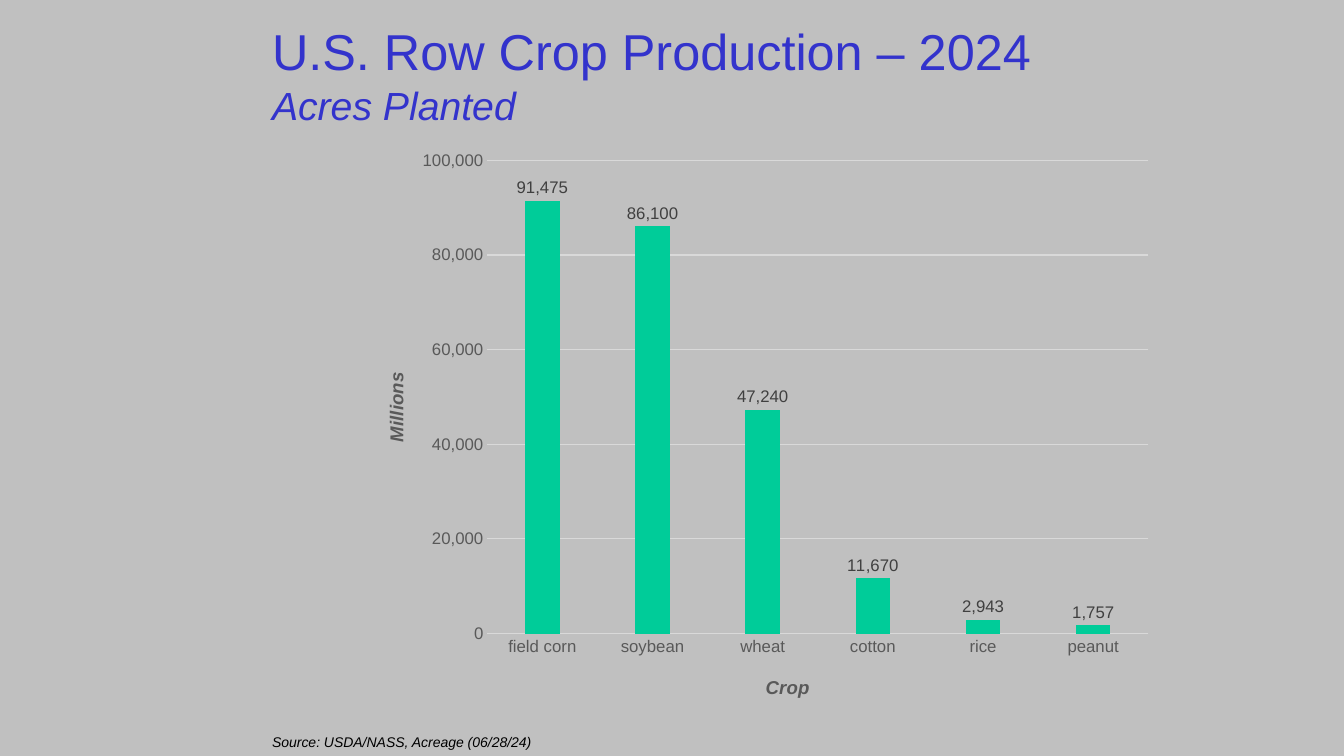
from dataclasses import dataclass

from lxml import etree
from pptx import Presentation
from pptx import util as u
from pptx.chart import data as chart_data
from pptx.dml import color
from pptx.enum import chart as chart_enum
from pptx.enum import text
from pptx.oxml import ns


@dataclass(frozen=True)
class Theme:
    """Colours, font and type sizes of the slide."""
    background: str = "C0C0C0"
    heading: str = "3333CC"
    ink: str = "000000"
    bar: str = "00CC99"
    axis: str = "595959"
    value: str = "404040"
    grid: str = "D9D9D9"
    font: str = "Arial"
    heading_size: float = 36
    subheading_size: float = 28
    axis_title_size: float = 13.3
    label_size: float = 12
    source_size: float = 10


@dataclass(frozen=True)
class Phrase:
    """One line of text and its style."""
    words: str
    size: float
    colour: str
    italic: bool = False


@dataclass(frozen=True)
class TextBlock:
    """A text box holding lines of one paragraph."""
    left: float
    top: float
    width: float
    height: float
    phrases: tuple[Phrase, ...]
    wrap: bool
    anchor: text.MSO_ANCHOR


@dataclass(frozen=True)
class AxisCaption:
    """An axis title, its place in the chart and its rotation."""
    words: str
    x: float
    y: float
    rotation: int


THEME = Theme()
ACRES = {
    "field corn": 91475,
    "soybean": 86100,
    "wheat": 47240,
    "cotton": 11670,
    "rice": 2943,
    "peanut": 1757,
}
TEXT_BLOCKS = (
    TextBlock(2.6, 0.11, 10.63, 1.25, (
        Phrase("U.S. Row Crop Production – 2024", THEME.heading_size, THEME.heading),
        Phrase("Acres Planted", THEME.subheading_size, THEME.heading, True),
    ), True, text.MSO_ANCHOR.MIDDLE),
    TextBlock(2.6, 7.23, 2.8, 0.27, (
        Phrase("Source: USDA/NASS, Acreage (06/28/24)", THEME.source_size, THEME.ink, True),
    ), False, text.MSO_ANCHOR.TOP),
)
CROP_CAPTION = AxisCaption("Crop", 0.5, 0.94, 0)
ACRES_CAPTION = AxisCaption("Millions", 0.02, 0.4, -5400000)


def style_font(font, size: float, colour: str, bold: bool = False, italic: bool = False) -> None:
    """Apply the theme font with a size, colour and emphasis."""
    font.name = THEME.font
    font.size = u.Pt(size)
    font.bold = bold
    font.italic = italic
    font.color.rgb = color.RGBColor.from_string(colour)


def style_line(line) -> None:
    """Give a chart line the grid colour and width."""
    line.color.rgb = color.RGBColor.from_string(THEME.grid)
    line.width = u.Pt(0.75)


def add_text(slide, block: TextBlock) -> None:
    """Draw a text block."""
    box = slide.shapes.add_textbox(
        u.Inches(block.left), u.Inches(block.top), u.Inches(block.width), u.Inches(block.height))
    frame = box.text_frame
    frame.word_wrap = block.wrap
    frame.vertical_anchor = block.anchor
    paragraph = frame.paragraphs[0]
    paragraph.text = "\v".join(phrase.words for phrase in block.phrases)
    for run, phrase in zip(paragraph.runs, block.phrases):
        style_font(run.font, phrase.size, phrase.colour, italic=phrase.italic)


def place(parent, index: int, **settings: float | str) -> None:
    """Set the manual layout of a chart part."""
    for old in parent.findall(ns.qn("c:layout")):
        parent.remove(old)
    layout = etree.Element(ns.qn("c:layout"))
    manual = etree.SubElement(layout, ns.qn("c:manualLayout"))
    for key, value in settings.items():
        etree.SubElement(manual, ns.qn(f"c:{key}")).set("val", str(value))
    parent.insert(index, layout)


def style_axis(axis, caption: AxisCaption) -> None:
    """Style an axis and add its caption."""
    axis.major_tick_mark = chart_enum.XL_TICK_MARK.NONE
    axis.minor_tick_mark = chart_enum.XL_TICK_MARK.NONE
    style_font(axis.tick_labels.font, THEME.label_size, THEME.axis)
    frame = axis.axis_title.text_frame
    frame.text = caption.words
    style_font(frame.paragraphs[0].runs[0].font, THEME.axis_title_size, THEME.axis, True, True)
    title = axis.axis_title._element
    body = title.find(".//" + ns.qn("a:bodyPr"))
    body.set("rot", str(caption.rotation))
    body.set("vert", "horz")
    place(title, 1, xMode="edge", yMode="edge", x=caption.x, y=caption.y)


def add_acres_chart(slide) -> None:
    """Draw the column chart of planted acres."""
    acres = chart_data.CategoryChartData(number_format="#,##0")
    acres.categories = list(ACRES)
    acres.add_series("Series 1", list(ACRES.values()))
    chart = slide.shapes.add_chart(
        chart_enum.XL_CHART_TYPE.COLUMN_CLUSTERED,
        u.Inches(3.62), u.Inches(1.43), u.Inches(7.88), u.Inches(5.57), acres).chart
    chart.has_title = False
    chart.has_legend = False
    style_font(chart.font, THEME.source_size, THEME.ink)

    style_axis(chart.category_axis, CROP_CAPTION)
    style_line(chart.category_axis.format.line)
    value_axis = chart.value_axis
    style_axis(value_axis, ACRES_CAPTION)
    value_axis.format.line.fill.background()
    value_axis.minimum_scale = 0
    value_axis.maximum_scale = 100000
    value_axis.major_unit = 20000
    value_axis.tick_labels.number_format = "#,##0"
    value_axis.tick_labels.number_format_is_linked = False
    style_line(value_axis.major_gridlines.format.line)

    plot = chart.plots[0]
    plot.gap_width = 219
    plot.overlap = -27
    plot.vary_by_categories = False
    bars = plot.series[0]
    bars.format.fill.solid()
    bars.format.fill.fore_color.rgb = color.RGBColor.from_string(THEME.bar)
    labels = bars.data_labels
    labels.show_value = True
    labels.position = chart_enum.XL_LABEL_POSITION.OUTSIDE_END
    labels.number_format = "#,##0"
    labels.number_format_is_linked = False
    style_font(labels.font, THEME.label_size, THEME.value)
    plot_area = chart._chartSpace.find(".//" + ns.qn("c:plotArea"))
    place(plot_area, 0, layoutTarget="inner", xMode="edge", yMode="edge",
          x=0.154, y=0.029, w=0.832, h=0.843)


def main() -> None:
    """Build and save the slide."""
    deck = Presentation()
    deck.slide_width = u.Inches(13.33)
    deck.slide_height = u.Inches(7.5)
    slide = deck.slides.add_slide(deck.slide_layouts[6])
    slide.background.fill.solid()
    slide.background.fill.fore_color.rgb = color.RGBColor.from_string(THEME.background)
    add_acres_chart(slide)
    for block in TEXT_BLOCKS:
        add_text(slide, block)
    deck.save("out.pptx")


if __name__ == "__main__":
    main()
